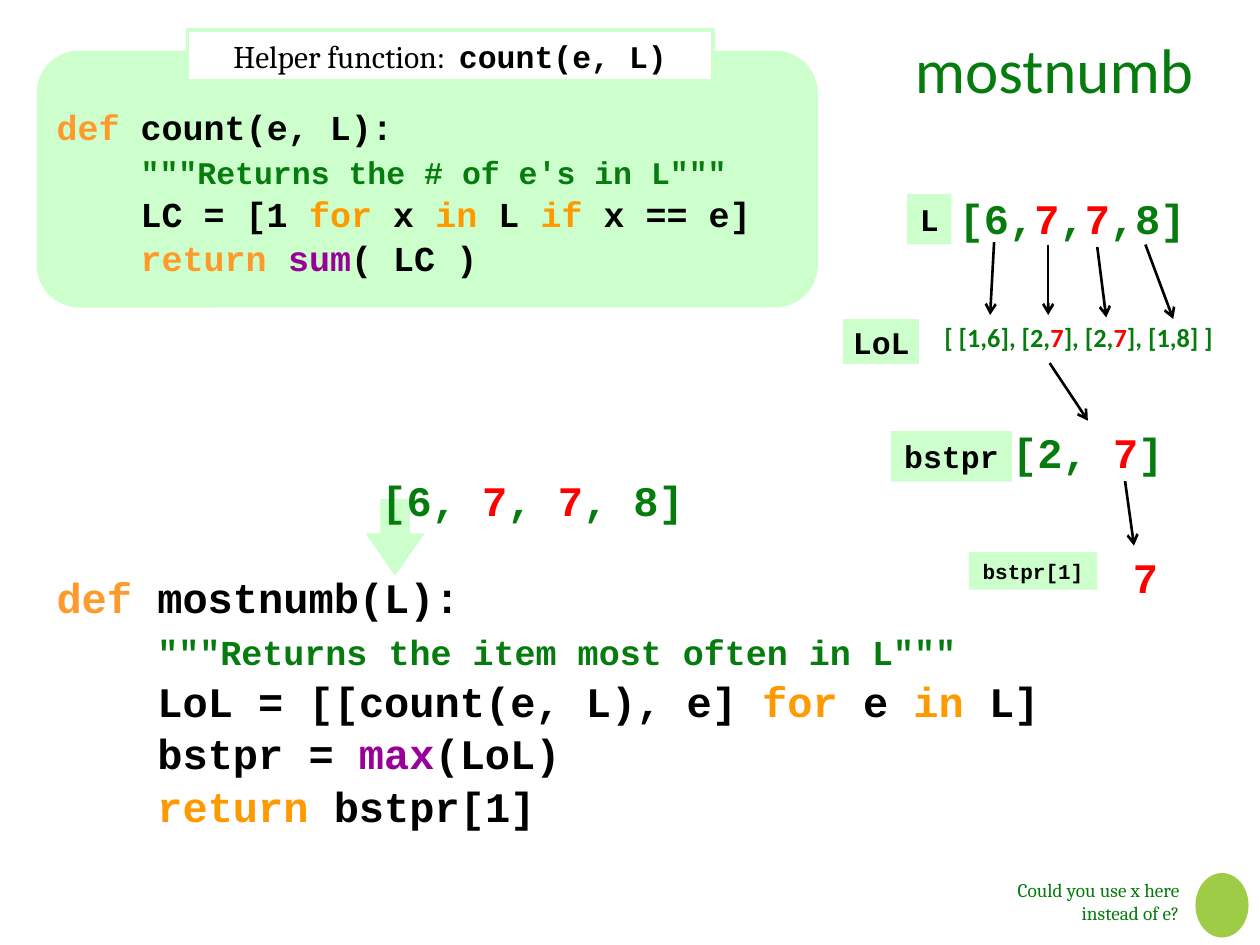
from pptx import Presentation
from pptx import util as u
from pptx.dml.color import RGBColor
from pptx.enum import shapes, text
from pptx.oxml.ns import qn
from lxml import etree

COLOURS = {
    "black": "000000", "white": "FFFFFF", "mint": "CCFFCC", "green": "067B0E",
    "red": "FF0000", "orange": "FF9900", "amber": "FE9A2C", "purple": "990099",
    "lime": "9ECC46",
}
CODE, SANS, SERIF = "Courier New", "Calibri", "Cambria"
LEFT, CENTRE, RIGHT = text.PP_ALIGN.LEFT, text.PP_ALIGN.CENTER, text.PP_ALIGN.RIGHT
SHAPE = shapes.MSO_SHAPE

TITLE = ("mostnumb", (18.19, 0.48, 6.17, 1.8))

COUNT_CODE = [
    [("def ", "amber"), ("count(e, L):", "black")],
    [("    ", "black"), ("\"\"\"Returns the # of e's in L\"\"\"", "green", 18)],
    [("    LC = [1 ", "black"), ("for", "orange"), (" x ", "black"), ("in", "orange"),
     (" L ", "black"), ("if", "orange"), (" x == e]", "black")],
    [("    return ", "amber"), ("sum", "purple"), ("( LC )", "black")],
]
MOSTNUMB_CODE = [
    [("def ", "amber"), ("mostnumb(L):", "black")],
    [("    ", "black"), ('"""Returns the item most often in L"""', "green", 20)],
    [("    LoL = [[count(e, L), e] ", "black"), ("for", "orange"), (" e ", "black"),
     ("in", "orange"), (" L]", "black")],
    [("    bstpr = ", "black"), ("max", "purple"), ("(LoL)", "black")],
    [("    return ", "orange"), ("bstpr[1]", "black")],
]
CODE_BLOCKS = [
    (MOSTNUMB_CODE, (0.89, 11.76, 23.34, 5.38), 24),
    (COUNT_CODE, (0.89, 2.31, 14.63, 3.58), 20),
]
VALUES = {
    "L": ([("[6,", "green"), ("7", "red"), (",", "green"), ("7", "red"), (",8]", "green")],
          (19.05, 3.76, 5.13, 1.27), 24, CODE, CENTRE),
    "LoL": ([("[ [1,6], [2,", "green"), ("7", "red"), ("], [2,", "green"), ("7", "red"),
             ("], [1,8] ]", "green")], (18.75, 6.35, 5.99, 0.89), 15, SANS, CENTRE),
    "bstpr": ([("[2, ", "green"), ("7", "red"), ("]", "green")],
              (20.14, 8.48, 3.58, 1.27), 24, CODE, CENTRE),
    "bstpr[1]": ([("7", "red")], (22.58, 11, 1.02, 1.27), 24, CODE, CENTRE),
    "argument": ([("[6, ", "green"), ("7", "red"), (", ", "green"), ("7", "red"),
                  (", 8]", "green")], (7.44, 9.45, 6.65, 1.27), 24, CODE, LEFT),
}
LABELS = [
    ("L", (18.29, 3.91, 0.89, 1.02), 18, None),
    ("LoL", (16.94, 6.38, 1.65, 1.02), 18, ("white", 3)),
    ("bstpr", (17.96, 8.69, 2.44, 1.02), 18, None),
    ("bstpr[1]", (19.53, 11.13, 2.59, 0.76), 12, None),
]
ARROWS = [
    (20.04, 4.88, 19.96, 6.35, None),
    (21.13, 4.93, 21.13, 6.35, None),
    (22.12, 4.98, 22.3, 6.4, None),
    (23.09, 4.93, 23.65, 6.43, None),
    (21.16, 7.32, 21.93, 8.48, "bstpr"),
    (22.68, 9.7, 22.86, 11, None),
]


def colour(name):
    return RGBColor.from_string(COLOURS[name])


def lengths(values):
    return [u.Cm(value) for value in values]


def write(box, lines, size, font, align=LEFT, bold=True, wrap=False,
          anchor=text.MSO_ANCHOR.TOP):
    frame = box.text_frame
    frame.word_wrap = wrap
    frame.auto_size = text.MSO_AUTO_SIZE.NONE
    frame.vertical_anchor = anchor
    frame.text = "\n".join("".join(part[0] for part in line) for line in lines)
    for para, line in zip(frame.paragraphs, lines):
        para.alignment = align
        para.text = ""
        for words, ink, *own_size in line:
            span = para.add_run()
            span.text = words
            span.font.name = font
            span.font.size = u.Pt(own_size[0] if own_size else size)
            span.font.bold = bold
            span.font.color.rgb = colour(ink)
    return frame


def add_text(page, place, *args, **options):
    box = page.shapes.add_textbox(*lengths(place))
    write(box, *args, **options)
    return box


def add_block(page, kind, place, fill, line=None):
    block = page.shapes.add_shape(kind, *lengths(place))
    block.shadow.inherit = False
    block.fill.solid()
    block.fill.fore_color.rgb = colour(fill)
    if line:
        block.line.color.rgb = colour(line[0])
        block.line.width = u.Pt(line[1])
    else:
        block.line.fill.background()
    return block


def add_arrow(page, ends, target=None):
    arrow = page.shapes.add_connector(shapes.MSO_CONNECTOR.STRAIGHT, *lengths(ends))
    if target is not None:
        arrow.end_connect(target, 0)
    arrow.line.color.rgb = colour("black")
    arrow.line.width = u.Pt(1.5)
    etree.SubElement(arrow.line._get_or_add_ln(), qn("a:tailEnd"), type="arrow")
    etree.SubElement(arrow._element.spPr, qn("a:effectLst"))


def main():
    deck = Presentation()
    deck.slide_width, deck.slide_height = lengths((25.4, 19.05))
    page = deck.slides.add_slide(deck.slide_layouts[5])

    title = page.shapes.title
    words, place = TITLE
    title.left, title.top, title.width, title.height = lengths(place)
    write(title, [[(words, "green")]], 36, SANS, bold=False)

    add_block(page, SHAPE.ROUNDED_RECTANGLE, (0.74, 1.02, 15.75, 5.18), "mint")
    for lines, place, size in CODE_BLOCKS:
        box = add_text(page, place, lines, size, CODE, wrap=True)
        for para in box.text_frame.paragraphs:
            para.line_spacing = 0.6
            para.space_before = u.Pt(size * 0.52)

    helper = add_block(page, SHAPE.RECTANGLE, (3.78, 0.61, 10.59, 1.02), "white",
                       ("mint", 2.25))
    frame = write(helper, [[("Helper function:  ", "black"), ("count(e, L)", "black")]],
                  18, CODE, CENTRE, anchor=text.MSO_ANCHOR.MIDDLE)
    lead = frame.paragraphs[0].runs[0].font
    lead.name, lead.bold = SERIF, False

    pointer = add_block(page, SHAPE.DOWN_ARROW, (7.37, 10.06, 1.19, 1.55), "mint")
    pointer.adjustments[1] = 0.72

    boxes = {name: add_text(page, place, [line], size, font, align)
             for name, (line, place, size, font, align) in VALUES.items()}
    for name, place, size, line in LABELS:
        label = add_block(page, SHAPE.RECTANGLE, place, "mint", line)
        write(label, [[(name, "black")]], size, CODE, CENTRE,
              anchor=text.MSO_ANCHOR.MIDDLE)
    for *ends, target in ARROWS:
        add_arrow(page, ends, boxes.get(target))

    add_block(page, SHAPE.OVAL, (24.1, 17.6, 1.07, 1.3), "lime")
    add_text(page, (19.69, 17.58, 4.34, 1.19),
             [[("Could you use x here instead of e?", "green")]],
             11, SERIF, RIGHT, bold=False, wrap=True)

    deck.save("out.pptx")


if __name__ == "__main__":
    main()
